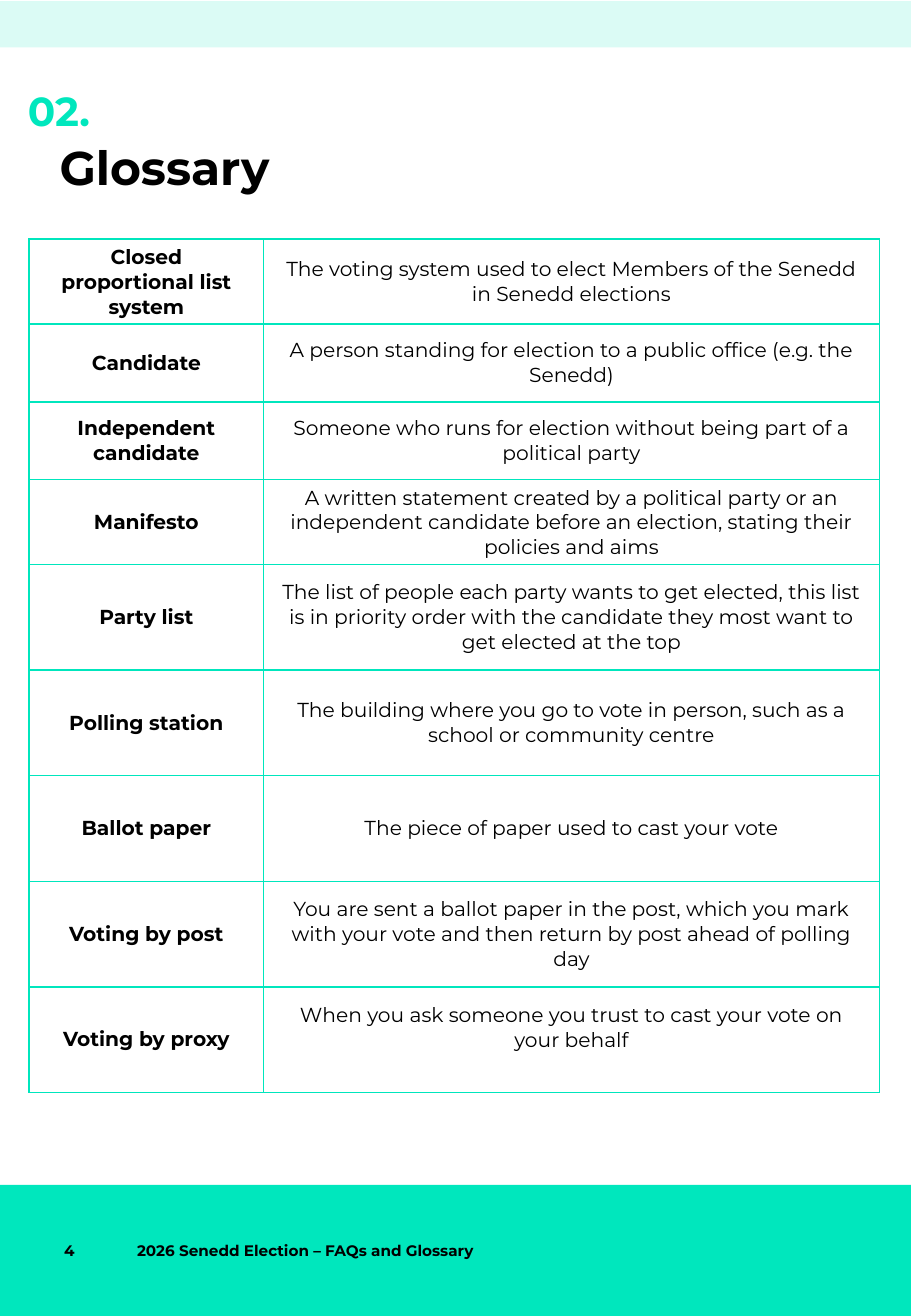
from dataclasses import dataclass

from lxml.etree import SubElement
from pptx import Presentation
from pptx.dml.color import RGBColor
from pptx.enum.shapes import MSO_SHAPE
from pptx.enum.text import MSO_ANCHOR as Anchor, PP_ALIGN as Align
from pptx.oxml import parse_xml
from pptx.oxml.ns import nsdecls, qn
from pptx.util import Inches, Pt


@dataclass(frozen=True)
class Theme:
    font: str = "Montserrat"
    mint: str = "00E7BD"
    border: str = "00E6BD"
    ink: str = "000000"
    title_size: int = 28
    number_size: int = 24
    table_size: int = 12
    footer_size: int = 9


THEME = Theme()
SLIDE_WIDTH = 7.5
FOOTER_TOP, FOOTER_HEIGHT = 9.76, 1.08
COLUMN_WIDTHS = (1.93, 5.07)
SHORT_ROW, TALL_ROW = 0.64, 0.87
SHORT_ROW_COUNT = 4

GLOSSARY = [
    ("Closed proportional list system",
     "The voting system used to elect Members of the Senedd in Senedd elections"),
    ("Candidate",
     "A person standing for election to a public office (e.g. the Senedd)"),
    ("Independent candidate",
     "Someone who runs for election without being part of a political party"),
    ("Manifesto",
     "A written statement created by a political party or an independent "
     "candidate before an election, stating their policies and aims"),
    ("Party list",
     "The list of people each party wants to get elected, this list is in priority "
     "order with the candidate they most want to get elected at the top"),
    ("Polling station",
     "The building where you go to vote in person, such as a school or community centre"),
    ("Ballot paper", "The piece of paper used to cast your vote"),
    ("Voting by post",
     "You are sent a ballot paper in the post, which you mark with your vote "
     "and then return by post ahead of polling day"),
    ("Voting by proxy",
     "When you ask someone you trust to cast your vote on your behalf"),
]


def style_paragraph(paragraph, size, bold=True, color=THEME.ink):
    font = paragraph.font
    font.name, font.size, font.bold = THEME.font, Pt(size), bold
    font.color.rgb = RGBColor.from_string(color)


def add_band(slide, top, height, opacity=100):
    """Add a full-width mint band; opacity is a percentage."""
    band = slide.shapes.add_shape(
        MSO_SHAPE.RECTANGLE, 0, Inches(top), Inches(SLIDE_WIDTH), Inches(height))
    band.shadow.inherit = False
    band.line.fill.background()
    band.fill.solid()
    band.fill.fore_color.rgb = RGBColor.from_string(THEME.mint)
    if opacity < 100:
        mint = band.fill._xPr.find(f"{qn('a:solidFill')}/{qn('a:srgbClr')}")
        SubElement(mint, qn("a:alpha"), val=str(opacity * 1000))


def add_label(slide, text, left, top, width, height, size, color=THEME.ink):
    label = slide.shapes.add_textbox(
        Inches(left), Inches(top), Inches(width), Inches(height))
    frame = label.text_frame
    frame.word_wrap = True
    frame.text = text
    style_paragraph(frame.paragraphs[0], size, color=color)
    return frame


def add_heading(slide, *label_args, **label_kwargs):
    """Add a label without insets and return its paragraph."""
    frame = add_label(slide, *label_args, **label_kwargs)
    frame.margin_left = frame.margin_right = 0
    frame.margin_top = frame.margin_bottom = 0
    return frame.paragraphs[0]


def add_footer_text(slide, text, left, width):
    frame = add_label(slide, text, left, FOOTER_TOP, width, FOOTER_HEIGHT,
                      THEME.footer_size)
    frame.vertical_anchor = Anchor.MIDDLE


def add_borders(cell):
    properties = cell._tc.get_or_add_tcPr()
    for position, side in enumerate(("lnL", "lnR", "lnT", "lnB")):
        properties.insert(position, parse_xml(
            f'<a:{side} {nsdecls("a")} w="{Pt(1)}"><a:solidFill>'
            f'<a:srgbClr val="{THEME.border}"/></a:solidFill></a:{side}>'))


def fill_cell(cell, text, bold):
    cell.text = text
    cell.vertical_anchor = Anchor.MIDDLE
    cell.fill.background()
    add_borders(cell)
    paragraph = cell.text_frame.paragraphs[0]
    paragraph.alignment = Align.CENTER
    style_paragraph(paragraph, THEME.table_size, bold)


def add_glossary(slide, left, top):
    heights = [SHORT_ROW if index < SHORT_ROW_COUNT else TALL_ROW
               for index in range(len(GLOSSARY))]
    table = slide.shapes.add_table(
        len(GLOSSARY), len(COLUMN_WIDTHS), Inches(left), Inches(top),
        Inches(sum(COLUMN_WIDTHS)), Inches(sum(heights))).table
    table.first_row = table.horz_banding = False
    for column, width in zip(table.columns, COLUMN_WIDTHS):
        column.width = Inches(width)
    for row, height, (term, meaning) in zip(table.rows, heights, GLOSSARY):
        row.height = Inches(height)
        fill_cell(row.cells[0], term, bold=True)
        fill_cell(row.cells[1], meaning, bold=False)
    # The last definition sits one half line above the middle of its row.
    table.cell(len(GLOSSARY) - 1, 1).margin_bottom = Inches(0.25)


def main():
    deck = Presentation()
    deck.slide_width, deck.slide_height = Inches(SLIDE_WIDTH), Inches(10.84)
    slide = deck.slides.add_slide(deck.slide_layouts[6])

    add_band(slide, FOOTER_TOP, FOOTER_HEIGHT)
    add_band(slide, 0.01, 0.38, opacity=14)
    add_heading(slide, "02.", 0.23, 0.71, 6.46, 0.37,
                THEME.number_size, color=THEME.mint)
    title = add_heading(slide, "Glossary", 0.49, 1.19, 6.82, 0.9, THEME.title_size)
    title.line_spacing = 0.9
    add_footer_text(slide, "2026 Senedd Election – FAQs and Glossary", 1.03, 3.14)
    add_footer_text(slide, "4", 0.43, 0.62)
    add_glossary(slide, 0.24, 1.97)

    deck.save("out.pptx")


if __name__ == "__main__":
    main()
